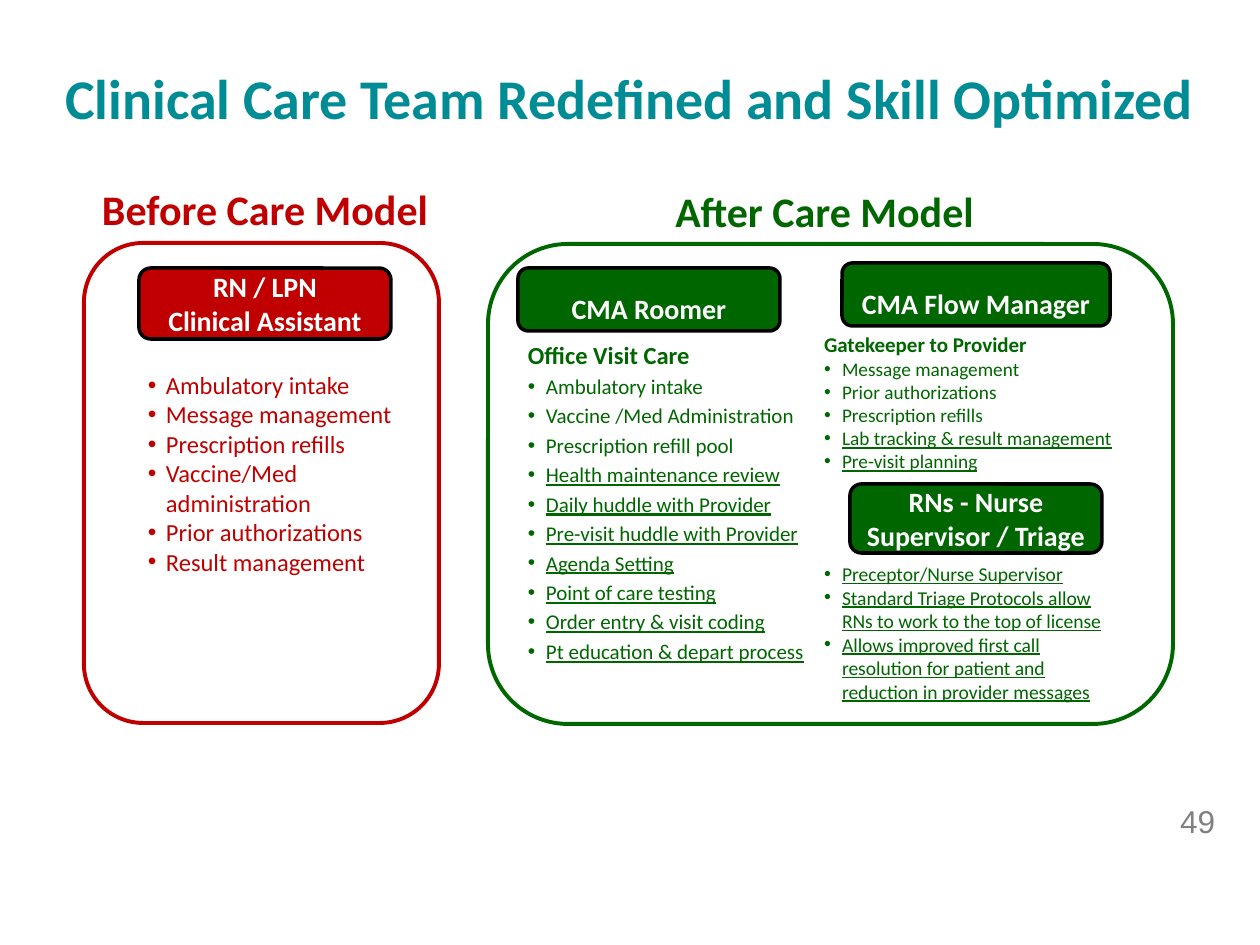
"""Build the before-and-after clinical care team slide."""
from lxml.etree import SubElement
from pptx import Presentation
from pptx.dml.color import RGBColor
from pptx.enum.shapes import MSO_SHAPE as Shape
from pptx.enum.text import MSO_ANCHOR as Anchor, PP_ALIGN as Align
from pptx.oxml.ns import qn
from pptx.util import Emu, Pt

COLORS = {"teal": "008C95", "red": "C00000", "green": "006600",
          "black": "000000", "white": "FFFFFF", "gray": "808080"}
SCALE = 914400 / 126
INDENT = 18

HEADINGS = [
    ("Clinical Care Team Redefined and Skill Optimized", (42, 58, 1176, 81), 32, "teal"),
    ("Before Care Model", (74, 178, 382, 63), 24, "red"),
    ("After Care Model", (640, 180, 369, 63), 24, "green"),
]
FRAMES = [((84, 243, 355, 480), "red"), ((488, 244, 685, 480), "green")]
ROLES = [
    (["RN / LPN", "Clinical Assistant"], (139, 268, 252, 71), "red", 0),
    (["CMA Roomer"], (518, 268, 262, 63), "green", 17),
    (["CMA Flow Manager"], (842, 263, 268, 63), "green", 17),
    (["RNs - Nurse Supervisor / Triage"], (850, 484, 252, 69), "green", 0),
]
DUTIES = [
    {"box": (135, 364, 276, 221), "color": "red", "size": 14,
     "kept": ["Ambulatory intake", "Message management", "Prescription refills",
              "Vaccine/Med administration", "Prior authorizations", "Result management"]},
    {"box": (519, 335, 315, 417), "color": "green", "size": 12, "gap": 2.4,
     "inset": (9, 5), "heading": ("Office Visit Care", 14),
     "kept": ["Ambulatory intake", "Vaccine /Med Administration", "Prescription refill pool"],
     "added": ["Health maintenance review", "Daily huddle with Provider",
               "Pre-visit huddle with Provider", "Agenda Setting", "Point of care testing",
               "Order entry & visit coding", "Pt education & depart process"]},
    {"box": (811, 326, 347, 155), "color": "green", "size": 11,
     "heading": ("Gatekeeper to Provider", 12),
     "kept": ["Message management", "Prior authorizations", "Prescription refills"],
     "added": ["Lab tracking & result management", "Pre-visit planning"]},
    {"box": (811, 556, 321, 204), "color": "green", "size": 11.2,
     "added": ["Preceptor/Nurse Supervisor",
               "Standard Triage Protocols allow RNs to work to the top of license",
               "Allows improved first call resolution for patient and reduction in provider messages"]},
]
PAGE = ("49", (1081, 796, 147, 29))


def px(value):
    return Emu(round(value * SCALE))


def rgb(color):
    return RGBColor.from_string(COLORS[color])


def add_run(paragraph, words, size, color, bold=False, underline=False, face="Calibri"):
    run = paragraph.add_run()
    run.text = words
    font = run.font
    font.name, font.size, font.bold = face, Pt(size), bold
    font.color.rgb = rgb(color)
    if underline:
        font.underline = True


def next_paragraph(frame, first):
    return frame.paragraphs[0] if first else frame.add_paragraph()


def add_text_frame(slide, box, inset=(13, 6)):
    frame = slide.shapes.add_textbox(*map(px, box)).text_frame
    frame.word_wrap = True
    frame.margin_left = frame.margin_right = px(inset[0])
    frame.margin_top = frame.margin_bottom = px(inset[1])
    return frame


def add_rounded(slide, box, line, width, fill=None):
    rounded = slide.shapes.add_shape(Shape.ROUNDED_RECTANGLE, *map(px, box))
    rounded.shadow.inherit = False
    rounded.line.color.rgb = rgb(line)
    rounded.line.width = Pt(width)
    if fill:
        rounded.fill.solid()
        rounded.fill.fore_color.rgb = rgb(fill)
    else:
        rounded.fill.background()
    return rounded


def add_role(slide, lines, box, color, drop):
    frame = add_rounded(slide, box, "black", 2, color).text_frame
    frame.word_wrap = True
    frame.vertical_anchor = Anchor.MIDDLE
    frame.margin_top, frame.margin_bottom = px(drop), 0
    for index, line in enumerate(lines):
        paragraph = next_paragraph(frame, index == 0)
        paragraph.alignment = Align.CENTER
        add_run(paragraph, line, 16, "white", bold=True)


def add_bullet(paragraph):
    properties = paragraph._p.get_or_add_pPr()
    properties.set("marL", str(px(INDENT)))
    properties.set("indent", str(-px(INDENT)))
    SubElement(properties, qn("a:buFont"), typeface="Arial")
    SubElement(properties, qn("a:buChar"), char="•")


def add_duties(slide, duties):
    frame = add_text_frame(slide, duties["box"], duties.get("inset", (13, 6)))
    color, heading = duties["color"], duties.get("heading")
    if heading:
        add_run(frame.paragraphs[0], *heading, color, bold=True)
    items = [(duty, False) for duty in duties.get("kept", [])]
    items += [(duty, True) for duty in duties.get("added", [])]
    for index, (duty, added) in enumerate(items):
        first = index == 0 and not heading
        paragraph = next_paragraph(frame, first)
        add_bullet(paragraph)
        if not first:
            paragraph.space_before = Pt(duties.get("gap", 0))
        add_run(paragraph, duty, duties["size"], color, underline=added)


def main():
    deck = Presentation()
    deck.slide_width, deck.slide_height = px(1260), px(945)
    slide = deck.slides.add_slide(deck.slide_layouts[6])
    for box, color in FRAMES:
        add_rounded(slide, box, color, 2.25)
    for role in ROLES:
        add_role(slide, *role)
    for duties in DUTIES:
        add_duties(slide, duties)
    for words, box, size, color in HEADINGS:
        heading = add_text_frame(slide, box).paragraphs[0]
        heading.alignment = Align.CENTER
        add_run(heading, words, size, color, bold=True)
    number, box = PAGE
    page = add_text_frame(slide, box).paragraphs[0]
    page.alignment = Align.RIGHT
    add_run(page, number, 18, "gray", face="Arial")
    deck.save("out.pptx")


if __name__ == "__main__":
    main()
